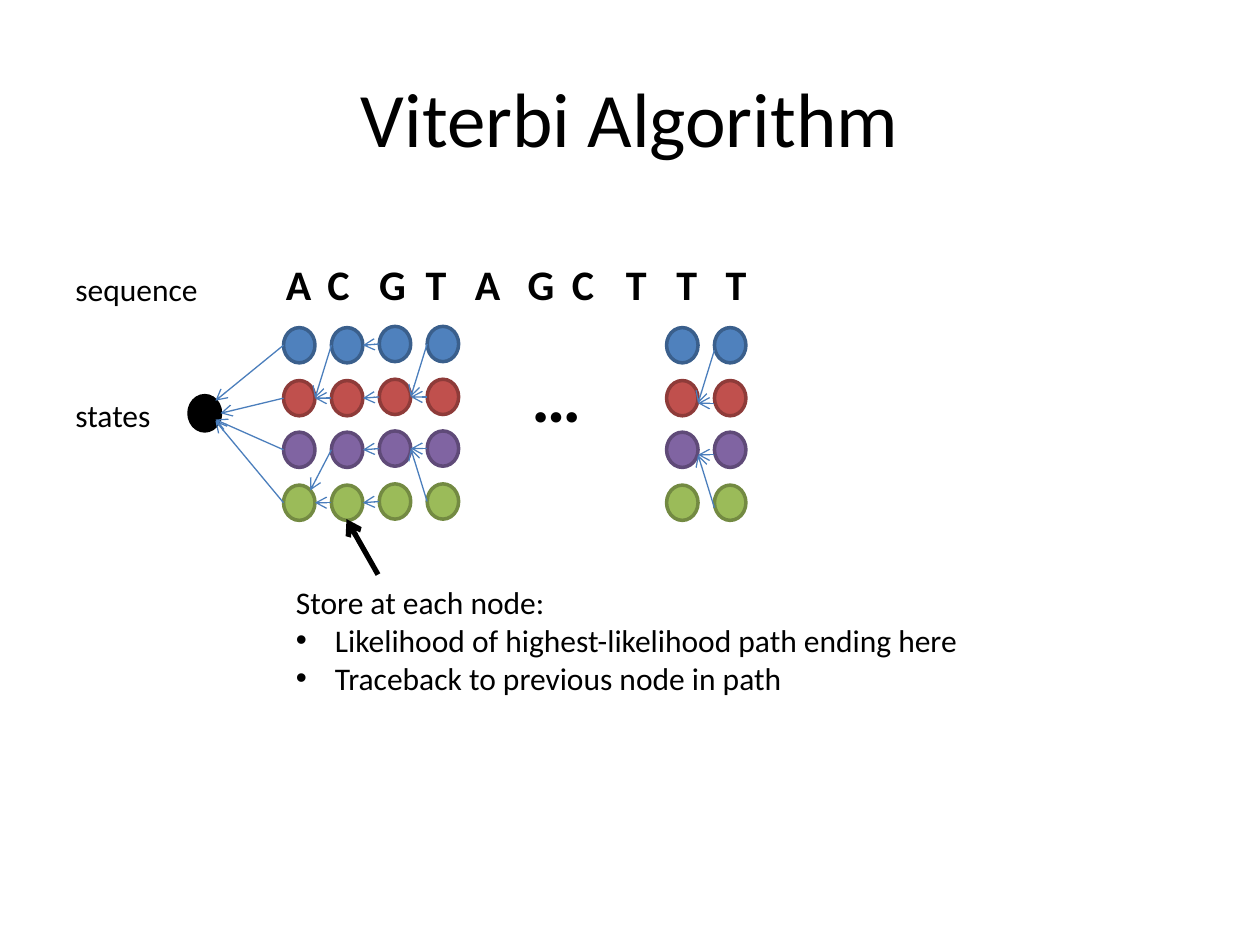
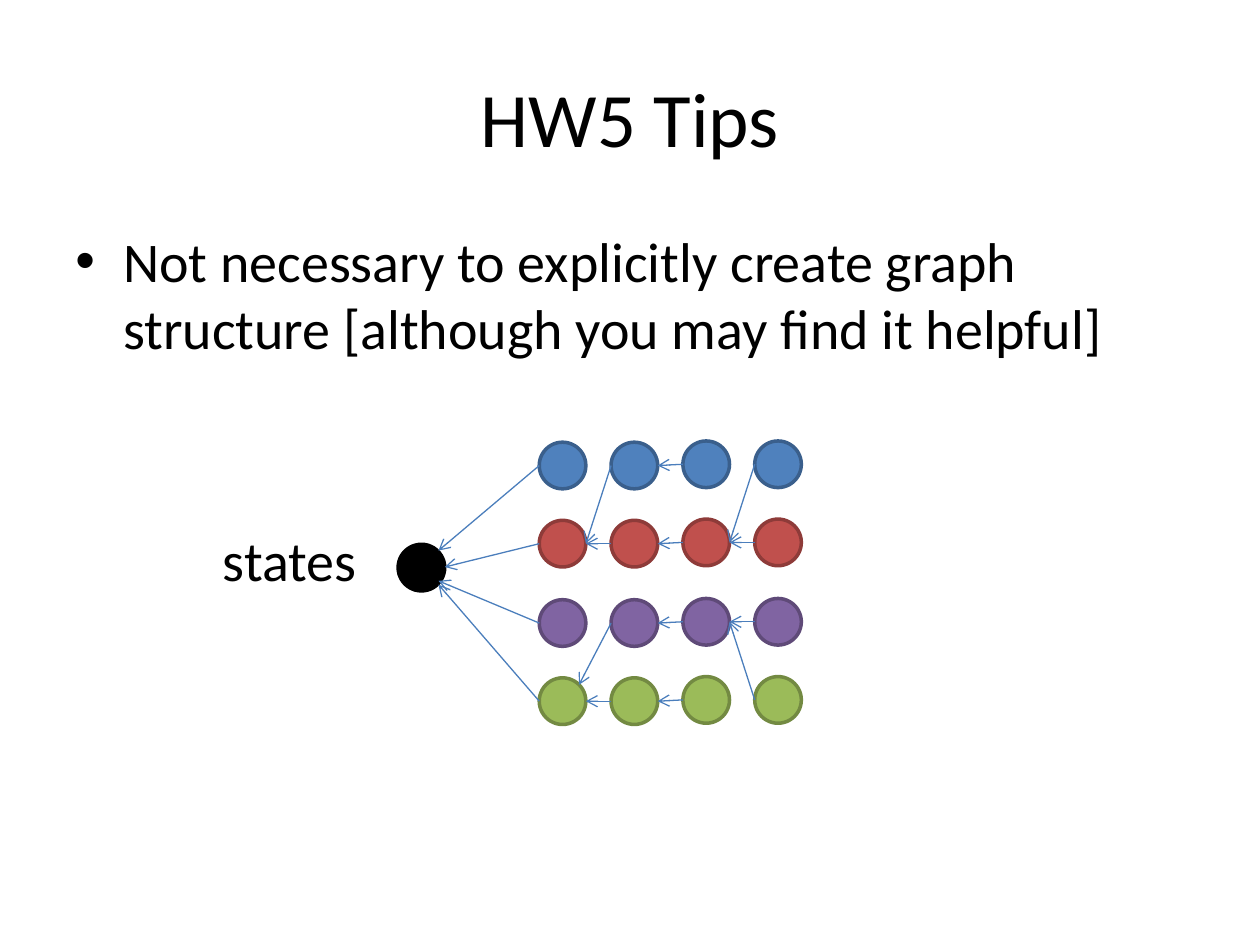
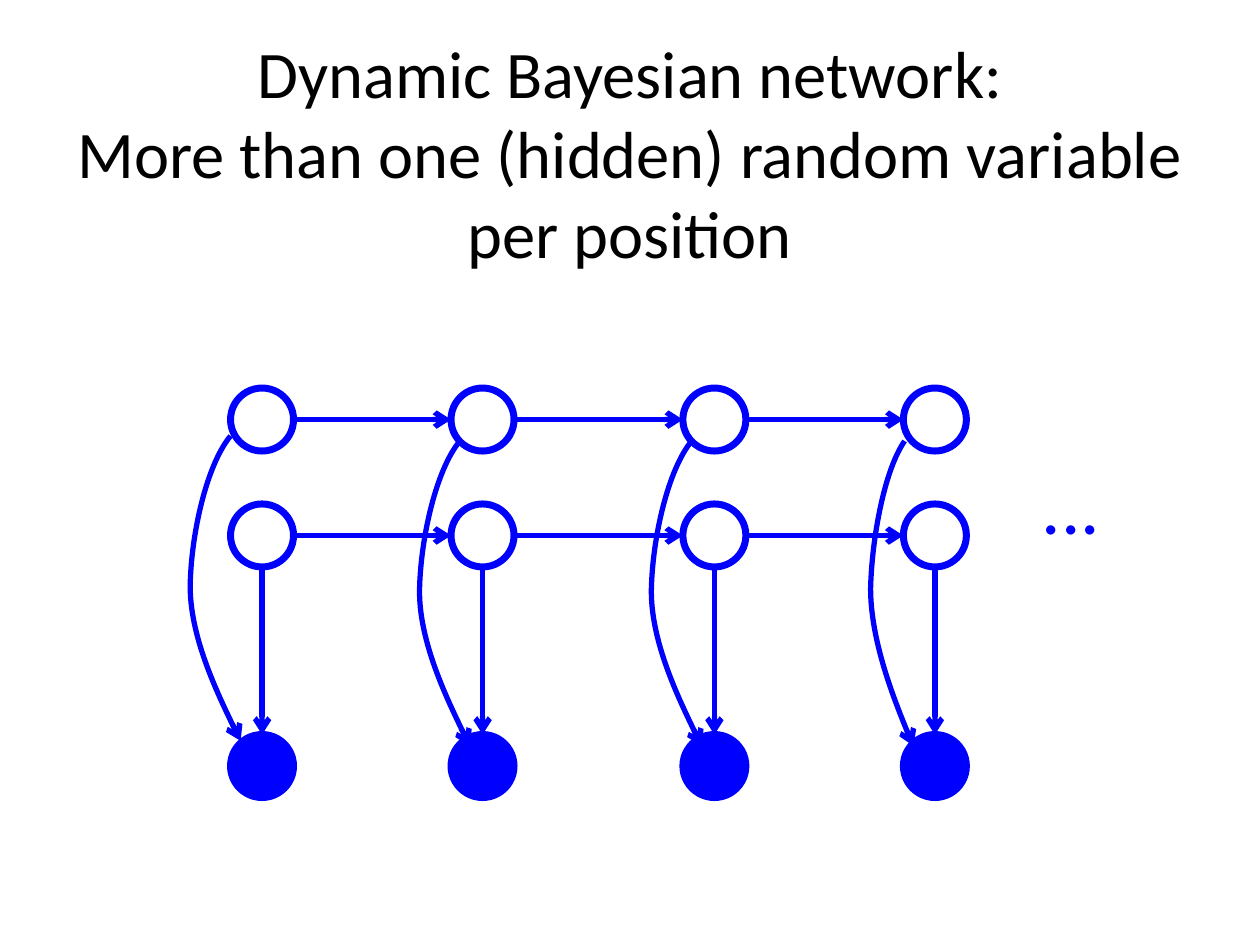
from lxml.etree import SubElement
from pptx import Presentation
from pptx.dml.color import RGBColor
from pptx.enum.shapes import MSO_CONNECTOR, MSO_SHAPE
from pptx.enum.text import MSO_ANCHOR, MSO_AUTO_SIZE, PP_ALIGN
from pptx.oxml.ns import qn
from pptx.util import Emu, Pt

PX = 9144
FONT = "Calibri"
BLACK = RGBColor(0x00, 0x00, 0x00)
BLUE = RGBColor(0x00, 0x00, 0xFF)
EDGE = RGBColor(0x4B, 0x7E, 0xBC)
STATES = [
    (RGBColor(0x4F, 0x81, 0xBD), RGBColor(0x3A, 0x5F, 0x8C)),
    (RGBColor(0xC0, 0x50, 0x4D), RGBColor(0x8E, 0x3B, 0x39)),
    (RGBColor(0x80, 0x64, 0xA2), RGBColor(0x5F, 0x4A, 0x78)),
    (RGBColor(0x9B, 0xBB, 0x59), RGBColor(0x73, 0x8A, 0x42)),
]

TITLE_BOX = (50, 30, 900, 125)
SEQUENCE = "ACGTAGCTTT"
SEQUENCE_TABS = [33, 74, 111, 150, 192, 227, 270, 310, 349]
STORED = [
    "Likelihood of highest-likelihood path ending here",
    "Traceback to previous node in path",
]
TIP = "Not necessary to explicitly create graph structure [although you may find it helpful]"

FIRST_EDGES = [
    ((1, 0), (0, 1)), ((1, 1), (0, 1)), ((1, 2), (0, 3)), ((1, 3), (0, 3)),
    ((2, 0), (1, 0)), ((2, 1), (1, 1)), ((2, 2), (1, 2)), ((2, 3), (1, 3)),
    ((3, 0), (2, 1)), ((3, 1), (2, 1)), ((3, 2), (2, 2)), ((3, 3), (2, 2)),
]
LAST_EDGES = [((1, 0), (0, 1)), ((1, 1), (0, 1)), ((1, 2), (0, 2)), ((1, 3), (0, 2))]
CORNER_EDGE = ((1, 2), (0, 3))

SMALL = dict(columns=[(225, 260), (263, 260), (301, 259), (339, 259)],
             size=(25, 28), pitch=125 / 3, edges=FIRST_EDGES)
SMALL_START = ((150, 314), [(171, 318), (175, 328), (171, 333), (171, 334)])
SMALL_LAST = dict(columns=[(529, 260), (567, 260)], size=(25, 28),
                  pitch=125 / 3, edges=LAST_EDGES, edge_drop=4)
LARGE = dict(columns=[(428, 351), (485, 351), (542, 350), (599, 350)],
             size=(37, 37), pitch=187 / 3, edges=FIRST_EDGES)
LARGE_START = ((316, 432), [(348, 437), (353, 450), (348, 461), (348, 464)])

NETWORK_X = [183, 358, 542, 717]
HIDDEN_Y = [308, 400]
OBSERVED_Y = 583
NODE = 50
CURVES = [(183, 346, 1), (365, 350, 1), (549, 350, 1), (718, 350, 0.83)]
CURVE_STEPS = [(-19, 23), (-31, 77), (-32, 117), (-33, 158), (-1, 225), (8, 242)]


def emu(*values):
    return [Emu(round(v * PX)) for v in values]


def add_run(p, text, size, color=BLACK, bold=False):
    r = p.add_run()
    r.text = text
    r.font.name = FONT
    r.font.size = Pt(size)
    r.font.color.rgb = color
    r.font.bold = bold


def add_text(shapes, box, text, size, color=BLACK, bold=False, align=PP_ALIGN.LEFT,
             grow=True, wrap=True):
    tf = shapes.add_textbox(*emu(*box)).text_frame
    tf.word_wrap = wrap
    tf.auto_size = MSO_AUTO_SIZE.SHAPE_TO_FIT_TEXT if grow else MSO_AUTO_SIZE.NONE
    p = tf.paragraphs[0]
    p.alignment = align
    for i, line in enumerate(text.split("\n")):
        if i:
            p.add_line_break()
        add_run(p, line, size, color, bold)
    return tf


def add_bullet(p, indent):
    pPr = p._p.get_or_add_pPr()
    pPr.set("marL", str(indent * PX))
    pPr.set("indent", str(-indent * PX))
    SubElement(pPr, qn("a:buFont")).set("typeface", "Arial")
    SubElement(pPr, qn("a:buChar")).set("char", "•")


def add_tabs(p, stops):
    tabs = SubElement(p._p.get_or_add_pPr(), qn("a:tabLst"))
    for stop in stops:
        tab = SubElement(tabs, qn("a:tab"))
        tab.set("pos", str(stop * PX))
        tab.set("algn", "l")


def style_arrow(line, color, width):
    line.color.rgb = color
    line.width = Pt(width)
    SubElement(line._get_or_add_ln(), qn("a:tailEnd")).set("type", "arrow")


def add_arrow(shapes, start, end, color=EDGE, width=0.75):
    c = shapes.add_connector(MSO_CONNECTOR.STRAIGHT, *emu(*start, *end))
    style_arrow(c.line, color, width)
    SubElement(c._element.spPr, qn("a:effectLst"))


def add_node(shapes, box, fill, outline, width=2):
    sp = shapes.add_shape(MSO_SHAPE.OVAL, *emu(*box))
    sp.shadow.inherit = False
    if fill is None:
        sp.fill.background()
    else:
        sp.fill.solid()
        sp.fill.fore_color.rgb = fill
    sp.line.color.rgb = outline
    sp.line.width = Pt(width)


def add_trellis(shapes, columns, size, pitch, edges, edge_drop=0, start=None):
    w, h = size

    def corner(col, row):
        x, top = columns[col]
        return x, round(top + row * pitch)

    def left(node):
        x, y = corner(*node)
        return x, y + h / 2 + edge_drop

    def right(node):
        x, y = left(node)
        return x + w, y

    def top_right(node):
        x, y = corner(*node)
        return x + 0.85 * w, y + 0.15 * h

    for col in range(len(columns)):
        for row, (fill, outline) in enumerate(STATES):
            add_node(shapes, (*corner(col, row), w, h), fill, outline)
    for edge in edges:
        source, target = edge
        end = top_right(target) if edge == CORNER_EDGE else right(target)
        add_arrow(shapes, left(source), end)
    if start:
        place, ends = start
        add_node(shapes, (*place, w, h), BLACK, BLACK)
        for row, end in enumerate(ends):
            add_arrow(shapes, left((0, row)), end)


def add_curve(shapes, x, y, stretch):
    builder = shapes.build_freeform(x, y, scale=PX)
    builder.add_line_segments([(x + round(dx * stretch), y + dy) for dx, dy in CURVE_STEPS],
                              close=False)
    sp = builder.convert_to_shape()
    path = sp._element.find(".//" + qn("a:path"))
    lines = path.findall(qn("a:lnTo"))
    for i in range(0, len(lines), 3):
        curve = SubElement(path, qn("a:cubicBezTo"))
        for line in lines[i:i + 3]:
            curve.append(line[0])
            path.remove(line)
    sp.shadow.inherit = False
    sp.fill.background()
    style_arrow(sp.line, BLUE, 3)


def add_slide(prs, title, size=44, box=TITLE_BOX):
    s = prs.slides.add_slide(prs.slide_layouts[6])
    tf = add_text(s.shapes, box, title, size, align=PP_ALIGN.CENTER, grow=False)
    tf.vertical_anchor = MSO_ANCHOR.MIDDLE
    return s.shapes


def viterbi_slide(prs):
    shapes = add_slide(prs, "Viterbi Algorithm")
    tf = add_text(shapes, (217, 200, 450, 56), "\t".join(SEQUENCE), 24, bold=True)
    add_tabs(tf.paragraphs[0], SEQUENCE_TABS)
    for label, top in [("sequence", 209), ("states", 309)]:
        add_text(shapes, (50, top, 133, 44), label, 18)
    add_trellis(shapes, **SMALL, start=SMALL_START)
    add_trellis(shapes, **SMALL_LAST)
    add_text(shapes, (383, 275, 117, 85), "…", 40, bold=True, align=PP_ALIGN.CENTER)
    tf = add_text(shapes, (225, 458, 625, 101), "Store at each node:", 18)
    for item in STORED:
        p = tf.add_paragraph()
        add_bullet(p, 31)
        add_run(p, item, 18)
    add_arrow(shapes, (300, 456), (275, 412), BLACK, 3)


def tips_slide(prs):
    shapes = add_slide(prs, "HW5 Tips")
    p = add_text(shapes, (50, 175, 900, 495), TIP, 32, grow=False).paragraphs[0]
    p.space_before = Pt(6.4)
    add_bullet(p, 38)
    group = shapes.add_group_shape().shapes
    add_text(group, (167, 412, 199, 64), "states", 32)
    add_trellis(group, **LARGE, start=LARGE_START)


def network_slide(prs):
    shapes = add_slide(prs, "Dynamic Bayesian network:\n"
                       "More than one (hidden) random variable per position",
                       38, (50, 58, 900, 125))
    half = NODE / 2
    for x in NETWORK_X:
        for y in HIDDEN_Y:
            add_node(shapes, (x, y, NODE, NODE), None, BLUE, 4)
        add_node(shapes, (x, OBSERVED_Y, NODE, NODE), BLUE, BLUE, 4)
        add_arrow(shapes, (x + half, HIDDEN_Y[-1] + NODE), (x + half, OBSERVED_Y), BLUE, 3)
    for y in HIDDEN_Y:
        for x, following in zip(NETWORK_X, NETWORK_X[1:]):
            add_arrow(shapes, (x + NODE, y + half), (following, y + half), BLUE, 3)
    for curve in CURVES:
        add_curve(shapes, *curve)
    add_text(shapes, (817, 358, 67, 84), "...", 44, BLUE, wrap=False)


def main():
    prs = Presentation()
    prs.slide_width, prs.slide_height = emu(1000, 750)
    viterbi_slide(prs)
    tips_slide(prs)
    network_slide(prs)
    prs.save("out.pptx")


if __name__ == "__main__":
    main()
